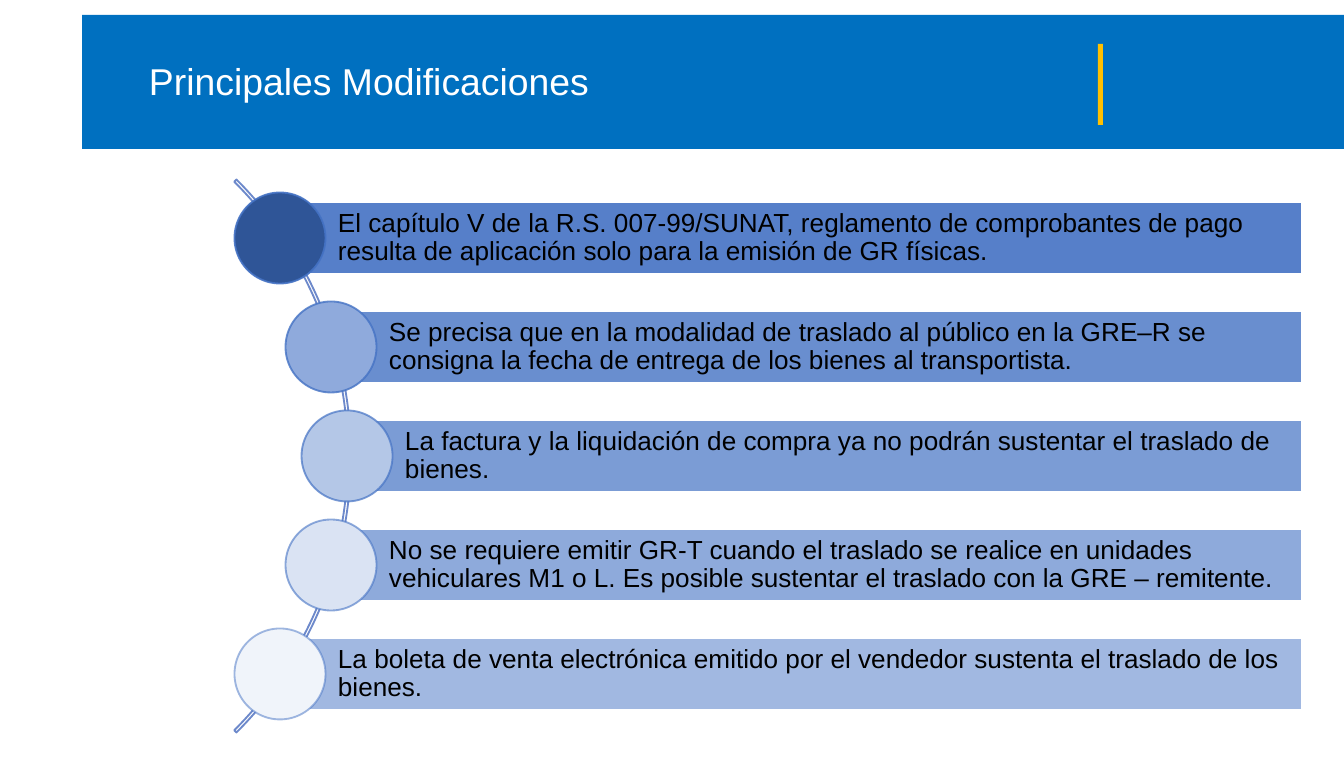
from dataclasses import dataclass
from math import sqrt

from lxml.etree import SubElement
from pptx import Presentation
from pptx.dml.color import RGBColor
from pptx.enum.shapes import MSO_SHAPE
from pptx.enum.text import MSO_ANCHOR, PP_ALIGN
from pptx.oxml.ns import qn
from pptx.util import Pt

EMU_PER_PX = 6809
SLIDE_WIDTH, SLIDE_HEIGHT = 1344, 757

ARC_X, ARC_Y = -40, 456
ARC_RADIUS, CIRCLE_ORBIT = 391, 387
ROW_PITCH, BAR_HEIGHT, BAR_RIGHT = 109, 72, 1302
CIRCLE_SIZE = 91


@dataclass(frozen=True)
class Theme:
    font: str = "Arial"
    banner: str = "0070C0"
    marker: str = "FFC000"
    accent: str = "4472C4"
    arc_line: str = "6D89CB"
    light: str = "FFFFFF"
    dark: str = "000000"
    title_size: int = 20
    body_size: int = 14
    line_width: int = 1


THEME = Theme()

# Text, circle colour and opacity (percent) of each row
CHANGES = [
    ("El capítulo V de la R.S. 007-99/SUNAT, reglamento de comprobantes de pago "
     "resulta de aplicación solo para la emisión de GR físicas.", "2F5597", 90),
    ("Se precisa que en la modalidad de traslado al público en la GRE–R se "
     "consigna la fecha de entrega de los bienes al transportista.", "8FAADC", 80),
    ("La factura y la liquidación de compra ya no podrán sustentar el traslado de "
     "bienes.", "B4C7E7", 70),
    ("No se requiere emitir GR-T cuando el traslado se realice en unidades "
     "vehiculares M1 o L. Es posible sustentar el traslado con la GRE – remitente.",
     "DAE3F3", 60),
    ("La boleta de venta electrónica emitido por el vendedor sustenta el traslado "
     "de los bienes.", "F0F4FA", 50),
]


def px(*lengths):
    return [round(length * EMU_PER_PX) for length in lengths]


def paint(fill, color, opacity=100):
    """Give a fill a solid colour with an opacity in percent."""
    fill.solid()
    fill.fore_color.rgb = RGBColor.from_string(color)
    if opacity < 100:
        color_element = fill._xPr.find(qn("a:solidFill"))[0]
        SubElement(color_element, qn("a:alpha"), val=str(opacity * 1000))


def add_figure(page, kind, place, fill=None, line=None, fill_opacity=100, line_opacity=100):
    figure = page.shapes.add_shape(kind, *px(*place))
    figure.shadow.inherit = False
    if fill:
        paint(figure.fill, fill, fill_opacity)
    else:
        figure.fill.background()
    if line:
        figure.line.width = Pt(THEME.line_width)
        paint(figure.line.fill, line, line_opacity)
    else:
        figure.line.fill.background()
    return figure


def write_text(box, text, size, color, insets):
    frame = box.text_frame
    frame.word_wrap = True
    frame.vertical_anchor = MSO_ANCHOR.MIDDLE
    (frame.margin_left, frame.margin_top,
     frame.margin_right, frame.margin_bottom) = px(*insets)
    para = frame.paragraphs[0]
    para.text = text
    para.alignment = PP_ALIGN.LEFT
    para.line_spacing = 0.9
    para.font.name = THEME.font
    para.font.size = Pt(size)
    para.font.color.rgb = RGBColor.from_string(color)


def add_banner(page, title):
    add_figure(page, MSO_SHAPE.RECTANGLE, (82, 15, SLIDE_WIDTH - 82, 134), THEME.banner)
    add_figure(page, MSO_SHAPE.RECTANGLE, (1098, 44, 5, 81), THEME.marker)
    box = page.shapes.add_textbox(*px(136, 56, 1109, 54))
    write_text(box, title, THEME.title_size, THEME.light, (13, 7, 13, 7))


def add_arc(page):
    place = (ARC_X - ARC_RADIUS, ARC_Y - ARC_RADIUS, 2 * ARC_RADIUS, 2 * ARC_RADIUS)
    arc = add_figure(page, MSO_SHAPE.BLOCK_ARC, place, line=THEME.arc_line)
    for index, value in enumerate((189, 27, 0.004)):
        arc.adjustments[index] = value


def add_change(page, offset, text, circle_color, opacity):
    """Add a bar and its circle, centred on the arc at a vertical offset."""
    center_x = round(ARC_X + sqrt(CIRCLE_ORBIT ** 2 - offset ** 2))
    center_y = ARC_Y + offset
    bar = add_figure(
        page, MSO_SHAPE.RECTANGLE,
        (center_x, center_y - BAR_HEIGHT // 2, BAR_RIGHT - center_x, BAR_HEIGHT),
        THEME.accent, THEME.light, fill_opacity=opacity)
    write_text(bar, text, THEME.body_size, THEME.dark, (58, 5, 5, 5))
    radius = CIRCLE_SIZE / 2
    add_figure(
        page, MSO_SHAPE.OVAL,
        (center_x - radius, center_y - radius, CIRCLE_SIZE, CIRCLE_SIZE),
        circle_color, THEME.accent, line_opacity=opacity)


def main():
    deck = Presentation()
    deck.slide_width, deck.slide_height = px(SLIDE_WIDTH, SLIDE_HEIGHT)
    page = deck.slides.add_slide(deck.slide_layouts[6])
    add_banner(page, "Principales Modificaciones")
    add_arc(page)
    middle = len(CHANGES) // 2
    for row, change in enumerate(CHANGES):
        add_change(page, (row - middle) * ROW_PITCH, *change)
    deck.save("out.pptx")


if __name__ == "__main__":
    main()
